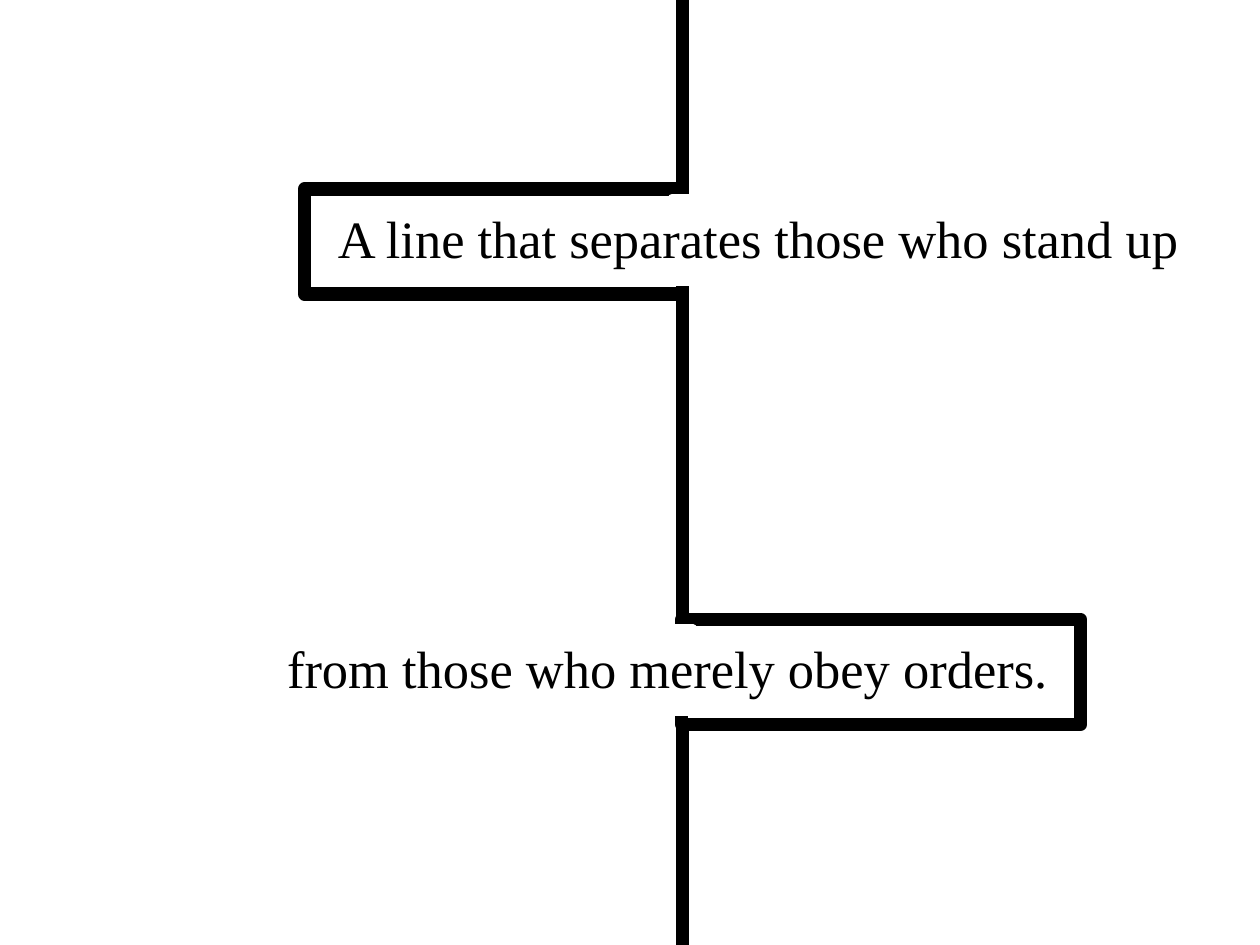
from pptx import Presentation
from pptx.dml.color import RGBColor
from pptx.enum.shapes import MSO_CONNECTOR, MSO_SHAPE
from pptx.enum.text import MSO_AUTO_SIZE, PP_ALIGN
from pptx.oxml.xmlchemy import OxmlElement
from pptx.util import Pt

BLACK = RGBColor(0, 0, 0)
WHITE = RGBColor(255, 255, 255)

deck = Presentation()
deck.slide_width, deck.slide_height = Pt(720), Pt(540)
page = deck.slides.add_slide(deck.slide_layouts[6])

divider = page.shapes.add_connector(
    MSO_CONNECTOR.STRAIGHT, Pt(390), Pt(0), Pt(390), Pt(540))
divider.line.color.rgb = BLACK
divider.line.width = Pt(7.5)
divider._element.spPr.append(OxmlElement("a:effectLst"))


def add_box(left, top, width, height, color, weight):
    box = page.shapes.add_shape(
        MSO_SHAPE.RECTANGLE, Pt(left), Pt(top), Pt(width), Pt(height))
    box.shadow.inherit = False
    box.fill.solid()
    box.fill.fore_color.rgb = WHITE
    box.line.color.rgb = color
    box.line.width = Pt(weight)


detours = [
    (108, (174, 216), (384, 48), (186, 534), PP_ALIGN.LEFT,
     "A line that separates those who stand up"),
    (354, (389.5, 228), (366, 30), (144, 462), PP_ALIGN.RIGHT,
     "from those who merely obey orders."),
]

for top, frame, gap, caption, alignment, wording in detours:
    add_box(frame[0], top, frame[1], 60, BLACK, 7.5)
    add_box(gap[0], top + 5, gap[1], 48, WHITE, 4.5)

    label = page.shapes.add_textbox(
        Pt(caption[0]), Pt(top + 6), Pt(caption[1]), Pt(44))
    label.fill.solid()
    label.fill.fore_color.rgb = WHITE
    label.text_frame.word_wrap = True
    label.text_frame.auto_size = MSO_AUTO_SIZE.SHAPE_TO_FIT_TEXT
    para = label.text_frame.paragraphs[0]
    para.text = wording
    para.alignment = alignment
    para.font.name = "Times New Roman"
    para.font.size = Pt(30)
    para.font.color.rgb = BLACK

deck.save("out.pptx")
